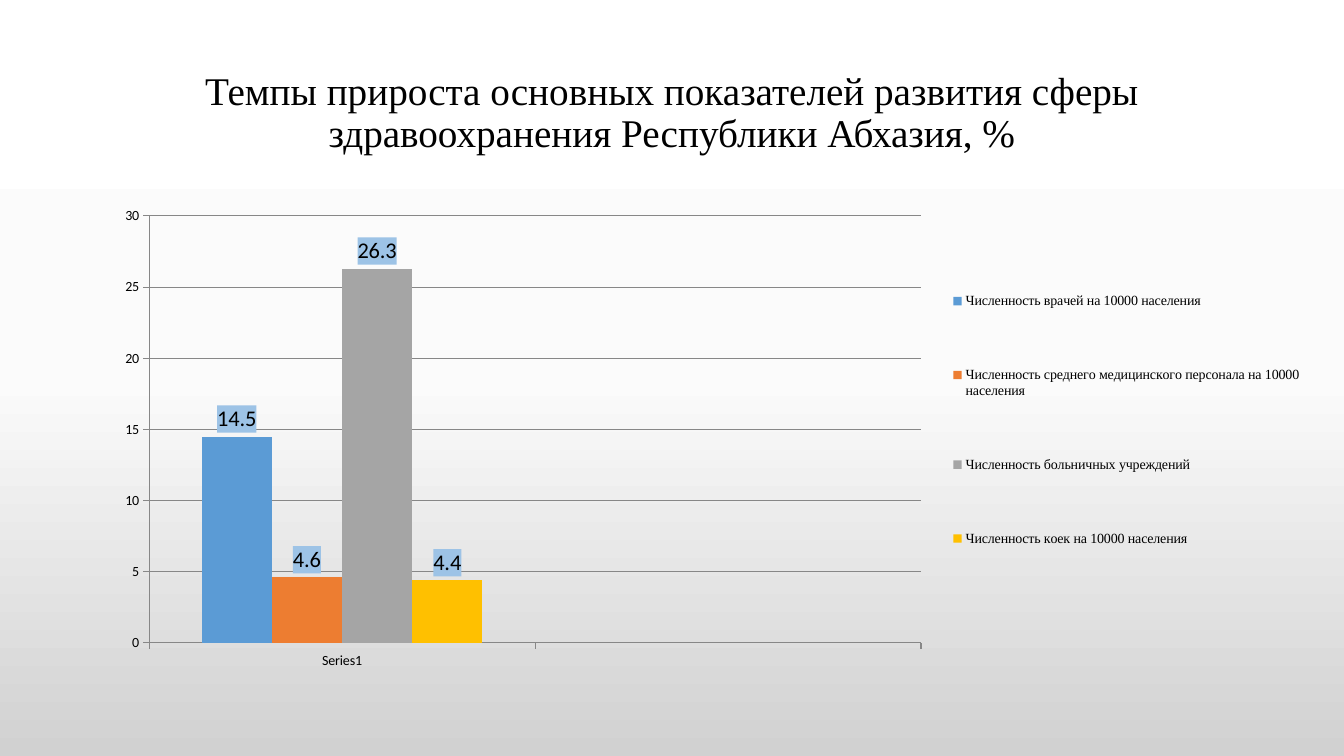
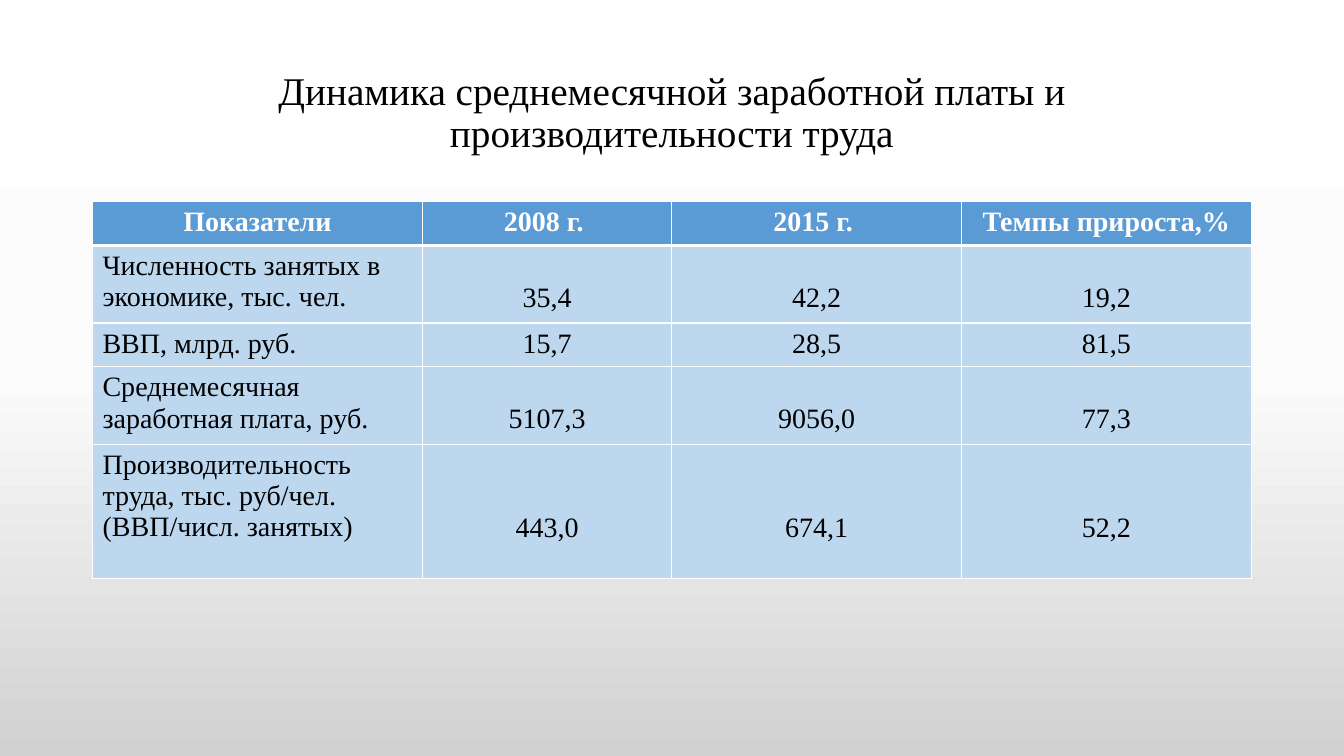
from copy import deepcopy
from dataclasses import dataclass

from lxml import etree
from pptx import Presentation
from pptx.chart.data import CategoryChartData
from pptx.dml.color import RGBColor
from pptx.enum.chart import XL_CHART_TYPE, XL_LABEL_POSITION, XL_LEGEND_POSITION, XL_TICK_MARK
from pptx.enum.text import MSO_ANCHOR, PP_ALIGN
from pptx.oxml import parse_xml
from pptx.oxml.ns import nsdecls, qn
from pptx.util import Cm, Pt

CENTER, LEFT = PP_ALIGN.CENTER, PP_ALIGN.LEFT
TOP, MIDDLE = MSO_ANCHOR.TOP, MSO_ANCHOR.MIDDLE
COLUMNS = XL_CHART_TYPE.COLUMN_CLUSTERED
OUTSIDE_END = XL_LABEL_POSITION.OUTSIDE_END
LEGEND_RIGHT = XL_LEGEND_POSITION.RIGHT
TICK_OUT = XL_TICK_MARK.OUTSIDE

BLACK = RGBColor(0x00, 0x00, 0x00)
WHITE = RGBColor(0xFF, 0xFF, 0xFF)
NEAR_WHITE = RGBColor(0xFB, 0xFB, 0xFB)
SILVER = RGBColor(0xD1, 0xD1, 0xD1)
AXIS_GRAY = RGBColor(0x87, 0x87, 0x87)
BLUE = RGBColor(0x5B, 0x9B, 0xD5)
ORANGE = RGBColor(0xED, 0x7D, 0x31)
GRAY = RGBColor(0xA5, 0xA5, 0xA5)
YELLOW = RGBColor(0xFF, 0xC0, 0x00)
LABEL_BLUE = RGBColor(0x9D, 0xC3, 0xE6)
CELL_BLUE = RGBColor(0xBD, 0xD7, 0xEE)

SERIF, SANS = "Times New Roman", "Calibri"
TITLE_FONT = {"name": SERIF, "size": Pt(28), "color": BLACK}
HEADER_FONT = {"name": SERIF, "size": Pt(20), "bold": True, "color": WHITE}
BODY_FONT = {"name": SERIF, "size": Pt(20), "bold": False, "color": BLACK}
AXIS_FONT = {"name": SANS, "size": Pt(10), "color": BLACK}
LEGEND_FONT = {"name": SERIF, "size": Pt(10), "color": BLACK}
LABEL_FONT = {"name": SANS, "size": Pt(16), "color": BLACK}

MARGIN_X, CONTENT_TOP = Cm(2.33), Cm(5.08)
COLUMN_WIDTHS = (8.32, 6.28, 7.3, 7.3)
CELL_MARGIN, LINE_HEIGHT = 0.13, 0.79


@dataclass(frozen=True)
class Indicator:
    name: str
    growth: float
    color: RGBColor


@dataclass(frozen=True)
class Row:
    """A table row whose values stand on the given text line."""
    cells: tuple[str, ...]
    height: float
    value_line: int = 1


INDICATORS = (
    Indicator("Численность врачей на 10000 населения", 14.5, BLUE),
    Indicator("Численность среднего медицинского персонала на 10000 населения", 4.6, ORANGE),
    Indicator("Численность больничных учреждений", 26.3, GRAY),
    Indicator("Численность коек на 10000 населения", 4.4, YELLOW),
)

ROWS = (
    Row(("Показатели", "2008 г. ", "2015 г. ", "Темпы прироста,%"), 1.04),
    Row(("Численность занятых в экономике, тыс. чел.", "35,4", "42,2", "19,2"), 1.83, 2),
    Row(("ВВП, млрд. руб.", "15,7", "28,5", "81,5"), 1.04),
    Row(("Среднемесячная заработная плата, руб.", "5107,3", "9056,0", "77,3"), 1.83, 2),
    Row(("Производительность труда, тыс. руб/чел. (ВВП/числ. занятых)",
         "443,0", "674,1", "52,2"), 3.39, 3),
)


def set_font(font, style: dict) -> None:
    for key, value in style.items():
        if key == "color":
            font.color.rgb = value
        else:
            setattr(font, key, value)


def write(tf, text: str, style: dict, align) -> None:
    p = tf.paragraphs[0]
    p.alignment = align
    r = p.add_run()
    r.text = text
    set_font(r.font, style)


def set_background(master) -> None:
    fill = master.background.fill
    fill.gradient()
    fill.gradient_angle = 270
    stops = master.element.find(".//" + qn("a:gsLst"))
    stops.append(deepcopy(stops[0]))
    shades = ((0, WHITE), (0.5, NEAR_WHITE), (1, SILVER))
    for stop, (position, color) in zip(fill.gradient_stops, shades):
        stop.position = position
        stop.color.rgb = color


def add_titled_slide(prs, title: str):
    s = prs.slides.add_slide(prs.slide_layouts[6])
    tf = s.shapes.add_textbox(MARGIN_X, Cm(1.02), Cm(29.2), Cm(3.68)).text_frame
    tf.word_wrap = True
    tf.vertical_anchor = MIDDLE
    write(tf, title, TITLE_FONT, CENTER)
    tf.paragraphs[0].line_spacing = 0.9
    return s


def make_layout(x: float, y: float, w: float, h: float, inner: bool = False):
    """Manual chart layout, in fractions of the chart area."""
    target = '<c:layoutTarget val="inner"/>' if inner else ""
    return parse_xml(
        f'<c:layout {nsdecls("c")}><c:manualLayout>{target}'
        '<c:xMode val="edge"/><c:yMode val="edge"/>'
        f'<c:x val="{x}"/><c:y val="{y}"/><c:w val="{w}"/><c:h val="{h}"/>'
        '</c:manualLayout></c:layout>')


def style_series(series, color: RGBColor) -> None:
    series.format.fill.solid()
    series.format.fill.fore_color.rgb = color
    labels = series.data_labels
    labels.show_value = True
    labels.position = OUTSIDE_END
    set_font(labels.font, LABEL_FONT)
    box = parse_xml(f'<c:spPr {nsdecls("c", "a")}><a:solidFill>'
                    f'<a:srgbClr val="{LABEL_BLUE}"/></a:solidFill></c:spPr>')
    series._element.find(f'{qn("c:dLbls")}/{qn("c:txPr")}').addprevious(box)


def add_growth_chart(s) -> None:
    data = CategoryChartData()
    data.categories = ("Series1", "")
    for item in INDICATORS:
        data.add_series(item.name, (item.growth, None))
    chart = s.shapes.add_chart(COLUMNS, Cm(2.54), CONTENT_TOP, Cm(30.4), Cm(12.09), data).chart
    chart.has_title = False
    set_font(chart.font, AXIS_FONT)

    plot = chart.plots[0]
    plot.gap_width, plot.overlap, plot.vary_by_categories = 150, 0, False
    for series, item in zip(plot.series, INDICATORS):
        style_series(series, item.color)

    value_axis = chart.value_axis
    value_axis.minimum_scale, value_axis.maximum_scale, value_axis.major_unit = 0, 30, 5
    value_axis.has_major_gridlines = True
    for axis in (chart.category_axis, value_axis):
        axis.major_tick_mark = TICK_OUT
        set_font(axis.tick_labels.font, AXIS_FONT)
    for part in (chart.category_axis, value_axis, value_axis.major_gridlines):
        part.format.line.color.rgb = AXIS_GRAY
        part.format.line.width = Pt(0.75)

    chart.has_legend = True
    legend = chart.legend
    legend.position = LEGEND_RIGHT
    legend.include_in_layout = False
    set_font(legend.font, LEGEND_FONT)

    places = ((chart.plots[0]._element.getparent(), make_layout(0.04, 0.03, 0.64, 0.89, True)),
              (legend._element, make_layout(0.7, 0.07, 0.3, 0.77)))
    for element, layout in places:
        for old in element.findall(qn("c:layout")):
            element.remove(old)
        element.insert(0 if element.tag == qn("c:plotArea") else 1, layout)


def set_borders(cell, bottom: int) -> None:
    tc_pr = cell._tc.get_or_add_tcPr()
    for i, (side, width) in enumerate((("L", 1), ("R", 1), ("T", 1), ("B", bottom))):
        line = etree.Element(qn(f"a:ln{side}"), w=str(Pt(width)))
        fill = etree.SubElement(line, qn("a:solidFill"))
        etree.SubElement(fill, qn("a:srgbClr"), val=str(WHITE))
        tc_pr.insert(i, line)


def add_wage_table(s) -> None:
    frame = s.shapes.add_table(len(ROWS), len(COLUMN_WIDTHS), MARGIN_X, CONTENT_TOP,
                               Cm(sum(COLUMN_WIDTHS)), Cm(sum(row.height for row in ROWS)))
    table = frame.table
    for column, width in zip(table.columns, COLUMN_WIDTHS):
        column.width = Cm(width)
    for i, row in enumerate(ROWS):
        header = i == 0
        table.rows[i].height = Cm(row.height)
        for j, text in enumerate(row.cells):
            cell = table.cell(i, j)
            cell.vertical_anchor = TOP
            lines_above = row.value_line - 1 if j else 0
            cell.margin_top = Cm(CELL_MARGIN + LINE_HEIGHT * lines_above)
            cell.fill.solid()
            cell.fill.fore_color.rgb = BLUE if header else CELL_BLUE
            set_borders(cell, bottom=3 if header else 1)
            write(cell.text_frame, text, HEADER_FONT if header else BODY_FONT,
                  CENTER if header or j else LEFT)


def main() -> None:
    prs = Presentation()
    prs.slide_width, prs.slide_height = Cm(33.87), Cm(19.05)
    set_background(prs.slide_master)
    add_growth_chart(add_titled_slide(
        prs, "Темпы прироста основных показателей развития сферы "
             "здравоохранения Республики Абхазия, %"))
    add_wage_table(add_titled_slide(
        prs, "Динамика среднемесячной заработной платы и производительности труда"))
    prs.save("out.pptx")


if __name__ == "__main__":
    main()
